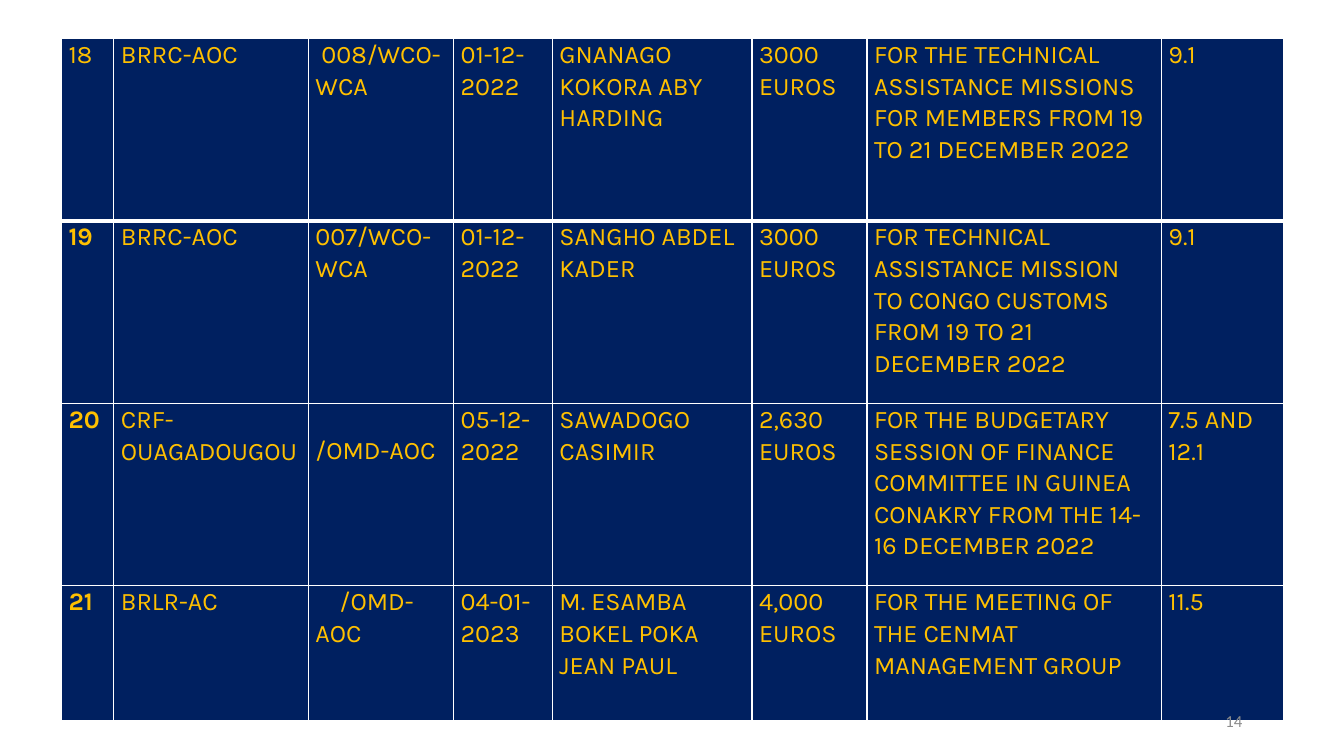
from lxml import etree
from pptx import Presentation
from pptx import util as u
from pptx.dml.color import RGBColor
from pptx.enum import text
from pptx.oxml import ns

SLIDE_W, SLIDE_H = 13.33, 7.5
COLORS = {"cell": "002060", "entry": "FFC000", "rule": "FFFFFF", "number": "8C8C8C"}
COLUMN_WIDTHS = [0.52, 1.93, 1.44, 0.98, 1.98, 1.14, 2.92, 1.21]
ROW_HEIGHTS = [1.81, 1.81, 1.81, 1.34]
THIN, THICK = 1, 3
REFERENCE = 2  # column of the reference numbers

MISSIONS = [
    ["18", "BRRC-AOC", " 008/WCO-WCA", "01-12-2022", "GNANAGO KOKORA ABY HARDING", "3000 EUROS",
     "FOR THE TECHNICAL ASSISTANCE MISSIONS FOR MEMBERS FROM 19 TO 21 DECEMBER 2022", "9.1"],
    ["19", "BRRC-AOC", "007/WCO-WCA", "01-12-2022", "SANGHO ABDEL KADER", "3000 EUROS",
     "FOR TECHNICAL ASSISTANCE MISSION TO CONGO CUSTOMS FROM 19 TO 21 DECEMBER 2022", "9.1"],
    ["20", "CRF-OUAGADOUGOU", "/OMD-AOC", "05-12-2022", "SAWADOGO CASIMIR", "2,630 EUROS",
     "FOR THE BUDGETARY SESSION OF FINANCE COMMITTEE IN GUINEA CONAKRY FROM THE 14-16 DECEMBER 2022",
     "7.5 AND 12.1"],
    ["21", "BRLR-AC", "/OMD-AOC", "04-01-2023", "M. ESAMBA BOKEL POKA JEAN PAUL", "4,000 EUROS",
     "FOR THE MEETING OF THE CENMAT MANAGEMENT GROUP", "11.5"],
]


def style_font(font, color, **values):
    for name, value in values.items():
        setattr(font, name, value)
    font.color.rgb = RGBColor.from_string(COLORS[color])


def rule_cell(cell, top, bottom):
    """Draw the four borders; top and bottom are widths in points."""
    properties = cell._tc.get_or_add_tcPr()
    for side, width in {"L": THIN, "R": THIN, "T": top, "B": bottom}.items():
        line = etree.SubElement(properties, ns.qn(f"a:ln{side}"), w=str(u.Pt(width)))
        fill = etree.SubElement(line, ns.qn("a:solidFill"))
        etree.SubElement(fill, ns.qn("a:srgbClr"), val=COLORS["rule"])


def fill_cell(cell, entry, bold):
    cell.fill.solid()
    cell.fill.fore_color.rgb = RGBColor.from_string(COLORS["cell"])
    margins = {"left": 0.07, "right": 0.07, "top": 0, "bottom": 0}
    for side, margin in margins.items():
        setattr(cell, f"margin_{side}", u.Inches(margin))
    paragraph = cell.text_frame.paragraphs[0]
    paragraph.line_spacing = 1.07
    run = paragraph.add_run()
    run.text = entry
    style_font(run.font, "entry", name="Karla", size=u.Pt(18), bold=bold)


def add_missions(slide, left, top, width, height):
    missions = slide.shapes.add_table(
        len(MISSIONS), len(COLUMN_WIDTHS), *map(u.Inches, (left, top, width, height))).table
    missions.first_row = missions.horz_banding = False
    for column, share in zip(missions.columns, COLUMN_WIDTHS):
        column.width = u.Inches(width * share / sum(COLUMN_WIDTHS))
    for row, share in zip(missions.rows, ROW_HEIGHTS):
        row.height = u.Inches(height * share / sum(ROW_HEIGHTS))
    for r, mission in enumerate(MISSIONS):
        for c, entry in enumerate(mission):
            cell = missions.cell(r, c)
            rule_cell(cell, THICK if r == 1 else THIN, THICK if r == 0 else THIN)
            fill_cell(cell, entry, bold=c == 0 and r > 0)

    # Reference 20 starts on the second line, reference 21 is indented
    missions.cell(2, REFERENCE).margin_top = u.Inches(0.31)
    indented = missions.cell(3, REFERENCE).text_frame.paragraphs[0]
    indented._p.get_or_add_pPr().set("indent", str(u.Inches(0.24)))


def add_page_number(slide, left, top, width, height):
    frame = slide.shapes.add_textbox(*map(u.Inches, (left, top, width, height))).text_frame
    frame.word_wrap = True
    frame.vertical_anchor = text.MSO_ANCHOR.MIDDLE
    paragraph = frame.paragraphs[0]
    paragraph.alignment = text.PP_ALIGN.RIGHT
    run = paragraph.add_run()
    run.text = "14"
    style_font(run.font, "number", name="Calibri", size=u.Pt(12))


def main():
    deck = Presentation()
    deck.slide_width, deck.slide_height = u.Inches(SLIDE_W), u.Inches(SLIDE_H)
    slide = deck.slides.add_slide(deck.slide_layouts[6])
    add_missions(slide, 0.61, 0.38, sum(COLUMN_WIDTHS), sum(ROW_HEIGHTS))
    add_page_number(slide, 9.42, 6.95, 3, 0.4)
    deck.save("out.pptx")


if __name__ == "__main__":
    main()
